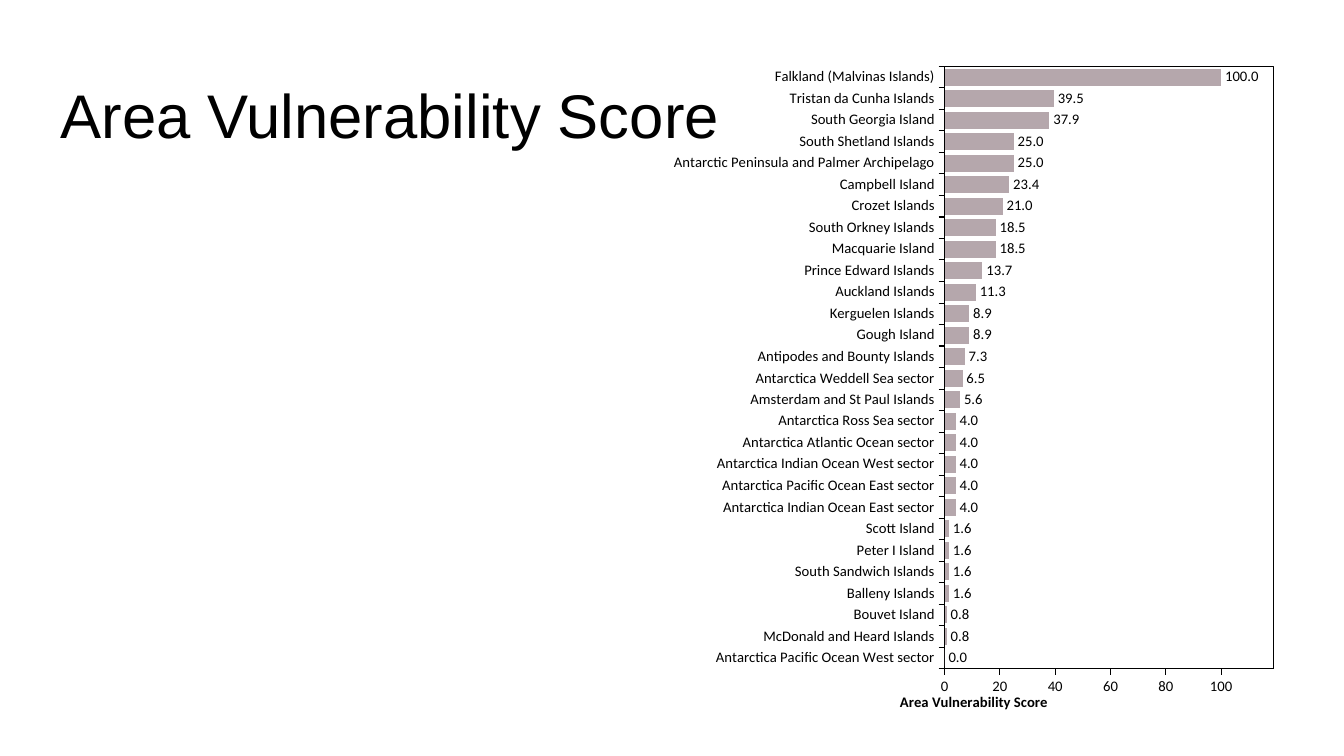
import pptx
import pptx.chart.data
import pptx.dml.color
import pptx.enum.chart
import pptx.enum.text
import pptx.oxml
import pptx.oxml.ns
import pptx.util
from pptx.util import Inches

BLACK = pptx.dml.color.RGBColor(0x00, 0x00, 0x00)
MAUVE = pptx.dml.color.RGBColor(0xB5, 0xA7, 0xAC)

HEAD = "Area Vulnerability Score"

# Scores from the bottom bar to the top one
SCORES = [
    ("Antarctica Pacific Ocean West sector", 0),
    ("McDonald and Heard Islands", 0.8),
    ("Bouvet Island", 0.8),
    ("Balleny Islands", 1.6),
    ("South Sandwich Islands", 1.6),
    ("Peter I Island", 1.6),
    ("Scott Island", 1.6),
    ("Antarctica Indian Ocean East sector", 4),
    ("Antarctica Pacific Ocean East sector", 4),
    ("Antarctica Indian Ocean West sector", 4),
    ("Antarctica Atlantic Ocean sector", 4),
    ("Antarctica Ross Sea sector", 4),
    ("Amsterdam and St Paul Islands", 5.6),
    ("Antarctica Weddell Sea sector", 6.5),
    ("Antipodes and Bounty Islands", 7.3),
    ("Gough Island", 8.9),
    ("Kerguelen Islands", 8.9),
    ("Auckland Islands", 11.3),
    ("Prince Edward Islands", 13.7),
    ("Macquarie Island", 18.5),
    ("South Orkney Islands", 18.5),
    ("Crozet Islands", 21),
    ("Campbell Island", 23.4),
    ("Antarctic Peninsula and Palmer Archipelago", 25),
    ("South Shetland Islands", 25),
    ("South Georgia Island", 37.9),
    ("Tristan da Cunha Islands", 39.5),
    ("Falkland (Malvinas Islands)", 100),
]


class Page:
    def __init__(self, slide):
        self.slide = slide
        self.face = "Calibri"
        self.size = 10.5

    def style(self, font, size=None, face=None, bold=False):
        font.size = pptx.util.Pt(size or self.size)
        font.name = face or self.face
        font.bold = bold
        font.color.rgb = BLACK

    def title(self, text, left, top, width, height):
        box = self.slide.shapes.title
        box.left, box.top = Inches(left), Inches(top)
        box.width, box.height = Inches(width), Inches(height)
        frame = box.text_frame
        frame.text = text
        frame.word_wrap = True
        frame.vertical_anchor = pptx.enum.text.MSO_ANCHOR.MIDDLE
        para = frame.paragraphs[0]
        para.alignment = pptx.enum.text.PP_ALIGN.LEFT
        self.style(para.runs[0].font, 44, "Arial")

    def place(self, node, index, inner=False, **parts):
        """Give a chart part a fixed place, in fractions of the chart."""
        for old in node.findall(pptx.oxml.ns.qn("c:layout")):
            node.remove(old)
        target = '<c:layoutTarget val="inner"/>' if inner else ""
        modes = "".join(f'<c:{k}Mode val="edge"/>' for k in "xy")
        sizes = "".join(f'<c:{k} val="{v}"/>' for k, v in parts.items())
        node.insert(index, pptx.oxml.parse_xml(
            f'<c:layout {pptx.oxml.ns.nsdecls("c")}><c:manualLayout>'
            f'{target}{modes}{sizes}</c:manualLayout></c:layout>'))

    def axis(self, axis):
        axis.has_major_gridlines = False
        axis.major_tick_mark = pptx.enum.chart.XL_TICK_MARK.OUTSIDE
        axis.minor_tick_mark = pptx.enum.chart.XL_TICK_MARK.NONE
        axis.format.line.color.rgb = BLACK
        axis.format.line.width = pptx.util.Pt(0.75)
        self.style(axis.tick_labels.font)

    def bars(self, rows, name, left, top, width, height):
        data = pptx.chart.data.CategoryChartData()
        data.categories = [area for area, score in rows]
        data.add_series("Series 1", [score for area, score in rows])
        chart = self.slide.shapes.add_chart(
            pptx.enum.chart.XL_CHART_TYPE.BAR_CLUSTERED, Inches(left),
            Inches(top), Inches(width), Inches(height), data).chart
        chart.has_title = chart.has_legend = False
        self.style(chart.font)

        # Bars and their labels
        plot = chart.plots[0]
        plot.gap_width = 25
        plot.vary_by_categories = False
        fill = plot.series[0].format.fill
        fill.solid()
        fill.fore_color.rgb = MAUVE
        plot.has_data_labels = True
        labels = plot.data_labels
        labels.show_value = True
        labels.position = pptx.enum.chart.XL_LABEL_POSITION.OUTSIDE_END
        labels.number_format = "#,##0.0"
        labels.number_format_is_linked = False
        self.style(labels.font)

        # Axes
        self.axis(chart.category_axis)
        scale = chart.value_axis
        self.axis(scale)
        scale.minimum_scale, scale.maximum_scale = 0, 119
        scale.major_unit = 20
        scale.tick_labels.number_format = "General"
        scale.tick_labels.number_format_is_linked = False
        frame = scale.axis_title.text_frame
        frame.text = name
        self.style(frame.paragraphs[0].runs[0].font, bold=True)
        self.place(scale.axis_title._element, 1, x=0.38, y=0.97)

        # Framed plot area
        area = chart._chartSpace.chart.plotArea
        self.place(area, 0, True, x=0.454, y=0.059, w=0.515, h=0.881)
        area.append(pptx.oxml.parse_xml(
            f'<c:spPr {pptx.oxml.ns.nsdecls("c", "a")}><a:noFill/>'
            f'<a:ln w="{pptx.util.Pt(0.75)}"><a:solidFill>'
            f'<a:srgbClr val="{BLACK}"/></a:solidFill></a:ln></c:spPr>'))


def main():
    deck = pptx.Presentation()
    deck.slide_width, deck.slide_height = Inches(13.33), Inches(7.5)
    page = Page(deck.slides.add_slide(deck.slide_layouts[5]))
    page.title(HEAD, 0.5, 0.4, 12.33, 1.45)
    page.bars(SCORES, HEAD, 6.49, 0.26, 6.34, 6.84)
    deck.save("out.pptx")


if __name__ == "__main__":
    main()
